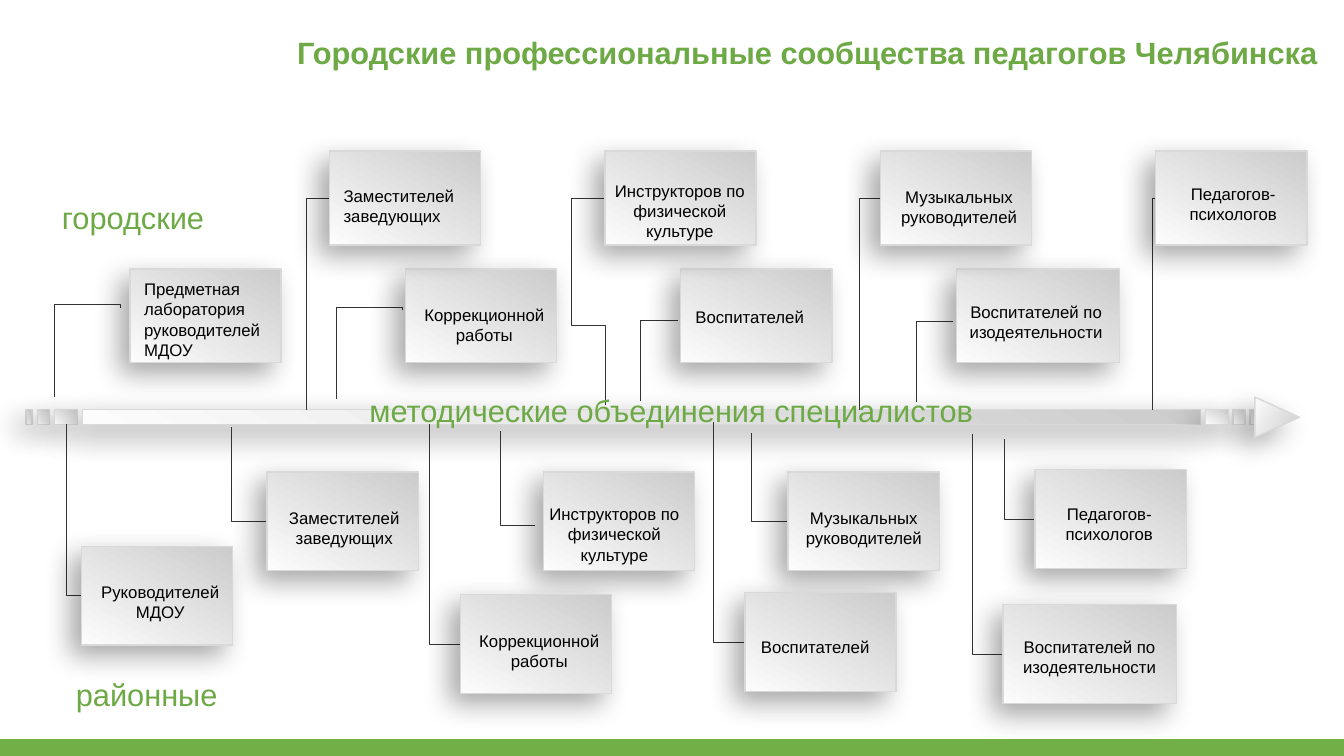
from lxml.etree import SubElement
from pptx import Presentation
from pptx.dml.color import RGBColor
from pptx.enum.shapes import MSO_CONNECTOR, MSO_SHAPE
from pptx.enum.text import MSO_AUTO_SIZE, PP_ALIGN
from pptx.oxml.ns import qn
from pptx.util import Pt

COLORS = {
    "green": "71AF47",
    "heading": "6DA945",
    "text": "000000",
    "dark": "CCCCCC",
    "light": "FCFCFC",
    "edge": "D9D9D9",
    "link": "333333",
    "shadow": "000000",
}
LEFT, CENTER = PP_ALIGN.LEFT, PP_ALIGN.CENTER

deck = Presentation()
deck.slide_width, deck.slide_height = Pt(960), Pt(540)
page = deck.slides.add_slide(deck.slide_layouts[6])


def add_panel(shapes, kind, left, top, width, height):
    """Grey gradient shape with a soft shadow to the lower left."""
    panel = shapes.add_shape(kind, Pt(left), Pt(top), Pt(width), Pt(height))
    panel.fill.gradient()
    panel.fill.gradient_angle = 240
    for stop, name in zip(panel.fill.gradient_stops, ("dark", "light")):
        stop.color.rgb = RGBColor.from_string(COLORS[name])
    panel.line.color.rgb = RGBColor.from_string(COLORS["edge"])
    panel.line.width = Pt(1)
    panel.shadow.inherit = False
    effects = panel._element.spPr.find(qn("a:effectLst"))
    shadow = SubElement(effects, qn("a:outerShdw"), blurRad=str(Pt(20)),
                        dist=str(Pt(10)), dir=str(136 * 60000), algn="ctr", rotWithShape="0")
    color = SubElement(shadow, qn("a:srgbClr"), val=COLORS["shadow"])
    SubElement(color, qn("a:alpha"), val="34000")
    return panel


def add_label(text, left, top, width, height, size=12, color="text", align=CENTER):
    box = page.shapes.add_textbox(Pt(left), Pt(top), Pt(width), Pt(height))
    box.text_frame.word_wrap = True
    box.text_frame.auto_size = MSO_AUTO_SIZE.SHAPE_TO_FIT_TEXT
    para = box.text_frame.paragraphs[0]
    para.text = text
    para.alignment = align
    para.font.name = "Arial"
    para.font.size = Pt(size)
    para.font.color.rgb = RGBColor.from_string(COLORS[color])
    return para


# Footer band and title
footer = page.shapes.add_shape(MSO_SHAPE.FLOWCHART_PROCESS, 0, Pt(527.6), Pt(960), Pt(14.4))
footer.fill.solid()
footer.fill.fore_color.rgb = RGBColor.from_string(COLORS["green"])
footer.line.fill.background()
footer.shadow.inherit = False

title = add_label("Городские профессиональные сообщества педагогов Челябинска",
                  144.7, 23.8, 864, 35.3, 22, "heading")
title.font.bold = True
title.line_spacing = 0.9

# Segmented arrow across the middle
arrow = page.shapes.add_group_shape()
segments = [(892.8, 4.3), (18.7, 4.3), (26.6, 8.6), (38.9, 16.6),
            (59, 798.5), (880.6, 8.6), (861.1, 16.6)]
for left, width in segments:
    add_panel(arrow.shapes, MSO_SHAPE.RECTANGLE, left, 292.3, width, 10.8)
head = add_panel(arrow.shapes, MSO_SHAPE.ISOSCELES_TRIANGLE, 897.8, 282.2, 28.8, 31.7)
head.rotation = 90

# One-bend links: card edge (x, y), then arrow end (x, y)
links = [
    (235.4, 141.8, 218.9, 293), (629.3, 141.8, 614.2, 293), (825.8, 141.8, 823, 293),
    (484.6, 229, 457.2, 286.6), (681.1, 229.7, 654.5, 287.3),
    (58.3, 425.5, 47.5, 303.1), (190.8, 372.2, 165.6, 305.3),
    (329, 460.1, 306.7, 303.1), (382.3, 375.1, 357.1, 308.2),
    (532.1, 458.6, 509.8, 301.7), (563, 372.2, 536.4, 309.6),
    (716.4, 467.3, 694.8, 310.3), (739.4, 370.8, 717.1, 313.9),
]
for link in links:
    connector = page.shapes.add_connector(MSO_CONNECTOR.ELBOW, *map(Pt, link))
    connector.line.color.rgb = RGBColor.from_string(COLORS["link"])
    connector.line.width = Pt(0.5)
    properties = connector._element.spPr
    properties.find(qn("a:prstGeom")).set("prst", "bentConnector2")
    SubElement(properties, qn("a:effectLst"))

# Links with more bends
bent_links = [
    [(38.9, 283.7), (38.9, 217.4), (85.7, 217.4), (85.7, 220.3)],
    [(240.5, 285.1), (240.5, 219.6), (287.3, 219.6), (287.3, 221.8)],
    [(432.7, 289.4), (432.7, 232.6), (408.2, 232.6), (408.2, 141.8), (432, 141.8)],
]
for points in bent_links:
    start, *corners = [(Pt(x), Pt(y)) for x, y in points]
    builder = page.shapes.build_freeform(*start)
    builder.add_line_segments(corners, close=False)
    outline = builder.convert_to_shape()
    outline.fill.background()
    outline.line.color.rgb = RGBColor.from_string(COLORS["link"])
    outline.line.width = Pt(0.5)
    outline.shadow.inherit = False

# Cards: text, alignment, line count, card (left, top, width, height), label (left, top, width)
STEP = 196.7
UPPER, MIDDLE = 108, 192.2
cards = [
    ("Предметная лаборатория руководителей МДОУ", LEFT, 4,
     (92.9, MIDDLE, 108, 67), (95.8, 195.8, 116.6)),
    ("Коррекционной работы", CENTER, 2,
     (92.9 + STEP, MIDDLE, 108, 67), (287.3, 213.8, 117.4)),
    ("Воспитателей", LEFT, 1,
     (92.9 + 2 * STEP, MIDDLE, 108, 67), (489.6, 215.3, 109.4)),
    ("Воспитателей по изодеятельности", CENTER, 2,
     (92.9 + 3 * STEP, MIDDLE, 116.6, 67), (676.8, 211.7, 126.7)),
    ("Заместителей заведующих", LEFT, 2,
     (235.4, UPPER, 108, 67), (238.3, 128.9, 104.4)),
    ("Инструкторов по физической культуре", CENTER, 3,
     (235.4 + STEP, UPPER, 108, 67), (428.4, 125.3, 114.5)),
    ("Музыкальных руководителей", CENTER, 2,
     (235.4 + 2 * STEP, UPPER, 108, 67), (623.5, 129.6, 123.1)),
    ("Педагогов-психологов", CENTER, 2,
     (235.4 + 3 * STEP, UPPER, 108, 67), (829.4, 127.4, 103)),
    ("Заместителей заведующих", CENTER, 2,
     (190.8, 337, 108, 70.6), (193.7, 359.3, 104.4)),
    ("Инструкторов по физической культуре", CENTER, 3,
     (388.1, 337, 108, 70.6), (383.8, 356.4, 110.2)),
    ("Музыкальных руководителей", CENTER, 2,
     (563, 337, 108, 70.6), (561.6, 359.3, 110.9)),
    ("Педагогов-психологов", CENTER, 2,
     (739.4, 335.5, 108, 70.6), (744.5, 356.4, 95.8)),
    ("Руководителей МДОУ", CENTER, 2,
     (58.3, 390.2, 108, 70.6), (56.9, 411.8, 115.2)),
    ("Коррекционной работы", CENTER, 2,
     (329, 424.8, 108, 70.6), (321.1, 447.1, 128.2)),
    ("Воспитателей", LEFT, 1,
     (532.1, 423.4, 108, 70.6), (536.4, 451.4, 112.3)),
    ("Воспитателей по изодеятельности", CENTER, 2,
     (716.4, 432, 123.8, 70.6), (716.4, 451.4, 123.8)),
]
for text, align, lines, card, label in cards:
    add_panel(page.shapes, MSO_SHAPE.RECTANGLE, *card)
    add_label(text, *label, 7.2 + 14.5 * lines, align=align)

# Green captions
captions = [
    ("методические объединения специалистов", 113, 276.5, 733),
    ("городские", 20.9, 138.2, 148.3),
    ("районные", 28.1, 478.8, 153.4),
]
for text, left, top, width in captions:
    add_label(text, left, top, width, 33.8, 22, "heading")

deck.save("out.pptx")
